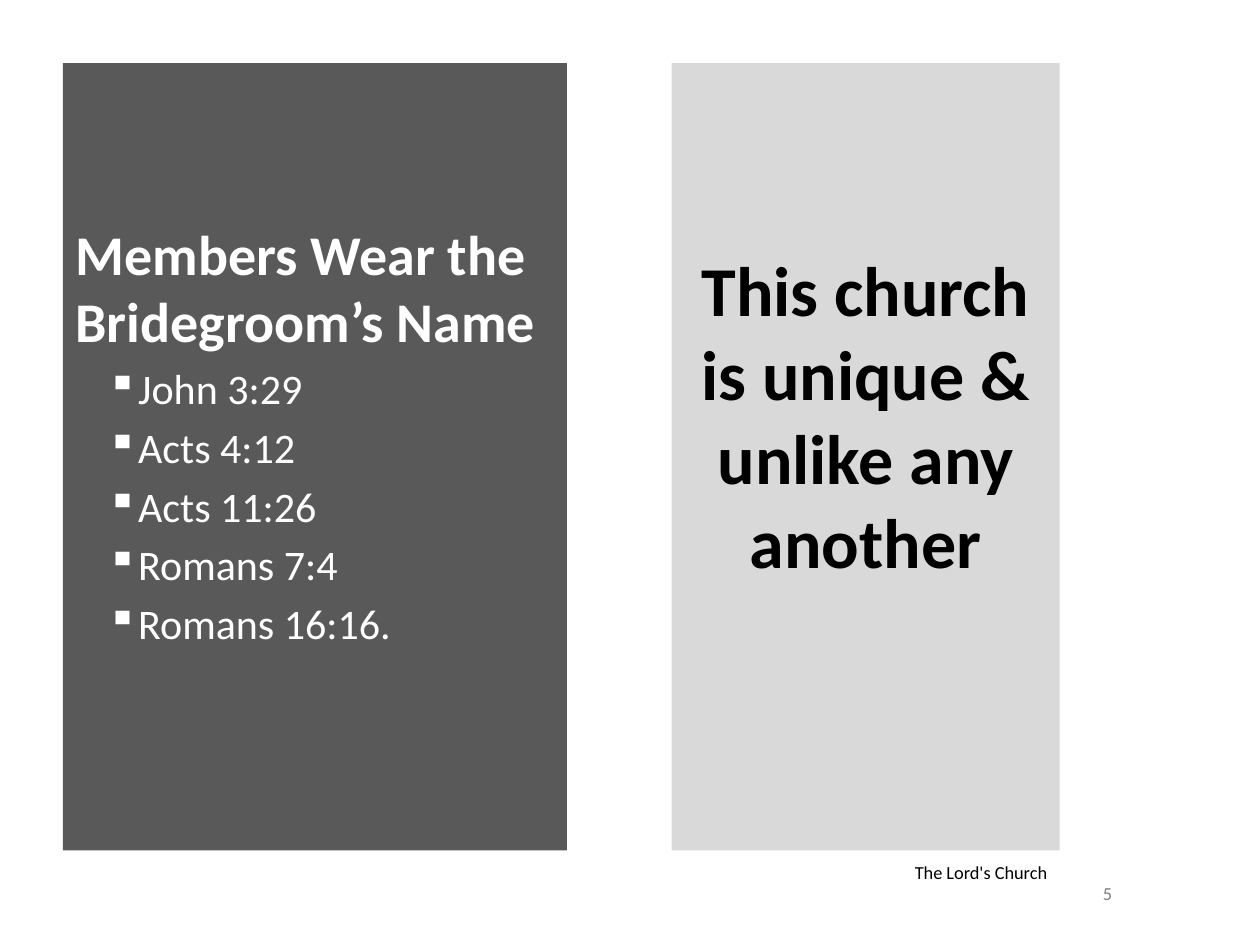
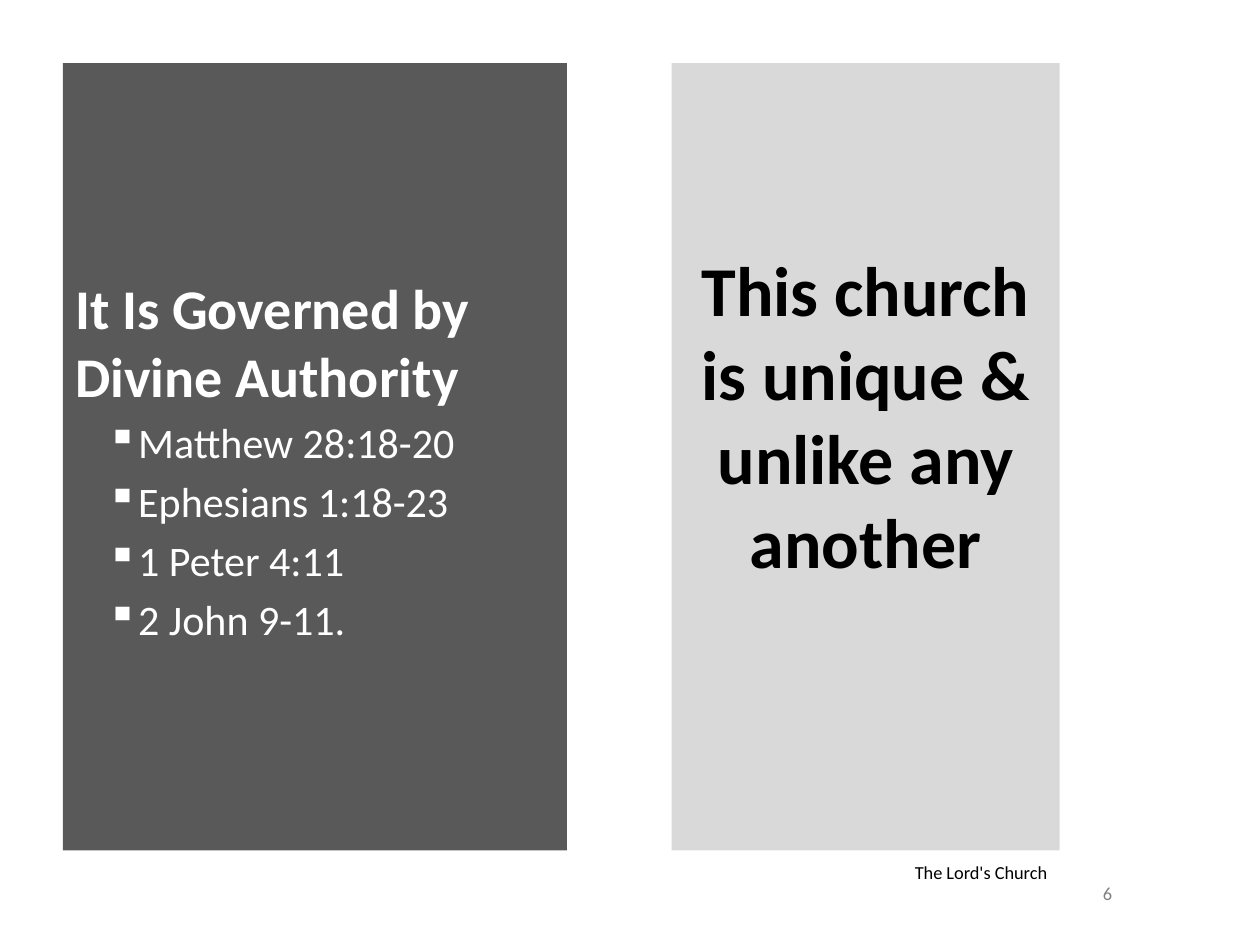
import pptx
import pptx.util
import pptx.dml.color
import pptx.enum.shapes
import pptx.enum.text
import pptx.oxml.ns
import lxml.etree

Pt = pptx.util.Pt
Align = pptx.enum.text.PP_ALIGN
Anchor = pptx.enum.text.MSO_ANCHOR

# Content: heading, verses, slide number, space above the heading
LESSONS = [
    ("Members Wear the Bridegroom’s Name",
     ["John 3:29", "Acts 4:12", "Acts 11:26", "Romans 7:4", "Romans 16:16."], 5, 89.5),
    ("It Is Governed by Divine Authority",
     ["Matthew 28:18-20", "Ephesians 1:18-23", "1 Peter 4:11", "2 John 9-11."], 6, 120.5),
]
CLAIM = "This church is unique & unlike any another"
FOOTER = "The Lord's Church"

# Shared look
FONT = "Calibri"
WHITE, BLACK, GREY = "FFFFFF", "000000", "808080"
DARK_PANEL, LIGHT_PANEL = "595959", "D9D9D9"
PANEL_TOP, PANEL_HEIGHT = 36, 450
CLAIM_LEFT, CLAIM_WIDTH = 383.76, 221.76
CLAIM_SPACE_ABOVE = 105


def rgb(value):
    return pptx.dml.color.RGBColor.from_string(value)


def style(paragraph, size, color, bold=False, align=Align.LEFT):
    paragraph.alignment = align
    font = paragraph.font
    font.name, font.size, font.bold = FONT, Pt(size), bold
    font.color.rgb = rgb(color)


def add_panel(slide, left, width, fill, space_above):
    panel = slide.shapes.add_shape(pptx.enum.shapes.MSO_SHAPE.RECTANGLE,
                                   Pt(left), Pt(PANEL_TOP), Pt(width), Pt(PANEL_HEIGHT))
    panel.shadow.inherit = False
    panel.fill.solid()
    panel.fill.fore_color.rgb = rgb(fill)
    panel.line.fill.background()
    frame = panel.text_frame
    frame.word_wrap = True
    frame.vertical_anchor = Anchor.TOP
    frame.margin_top = Pt(space_above)
    return frame


def add_label(slide, box, text, color, align, anchor):
    frame = slide.shapes.add_textbox(*map(Pt, box)).text_frame
    frame.word_wrap = True
    frame.vertical_anchor = anchor
    label = frame.paragraphs[0]
    label.text = text
    style(label, 10.5, color, align=align)


def add_bullet(paragraph, color):
    properties = paragraph._p.get_or_add_pPr()
    properties.set("marL", str(Pt(32.4)))
    properties.set("indent", str(Pt(-14.4)))
    qn = pptx.oxml.ns.qn
    bullet_color = lxml.etree.SubElement(properties, qn("a:buClr"))
    lxml.etree.SubElement(bullet_color, qn("a:srgbClr"), val=color)
    lxml.etree.SubElement(properties, qn("a:buChar"), char="▪")


def add_lesson(deck, heading_text, verses, number, space_above):
    slide = deck.slides.add_slide(deck.slide_layouts[6])

    # Heading and verses
    lesson = add_panel(slide, 36, 288, DARK_PANEL, space_above)
    heading = lesson.paragraphs[0]
    heading.text = heading_text
    style(heading, 32, WHITE, bold=True)
    for verse_text in verses:
        verse = lesson.add_paragraph()
        verse.text = verse_text
        verse.space_before = Pt(4.8)
        add_bullet(verse, WHITE)
        style(verse, 24, WHITE)

    # Claim
    claim = add_panel(slide, CLAIM_LEFT, CLAIM_WIDTH, LIGHT_PANEL, CLAIM_SPACE_ABOVE).paragraphs[0]
    claim.text = CLAIM
    style(claim, 40, BLACK, bold=True, align=Align.CENTER)

    # Slide number and footer
    add_label(slide, (612, 504, 41.76, 12.24), str(number), GREY, Align.CENTER, Anchor.MIDDLE)
    add_label(slide, (CLAIM_LEFT, 496.08, CLAIM_WIDTH, 12.24), FOOTER, BLACK,
              Align.RIGHT, Anchor.BOTTOM)


def main():
    deck = pptx.Presentation()
    deck.slide_width, deck.slide_height = Pt(720), Pt(540)
    for lesson in LESSONS:
        add_lesson(deck, *lesson)
    deck.save("out.pptx")


if __name__ == "__main__":
    main()
